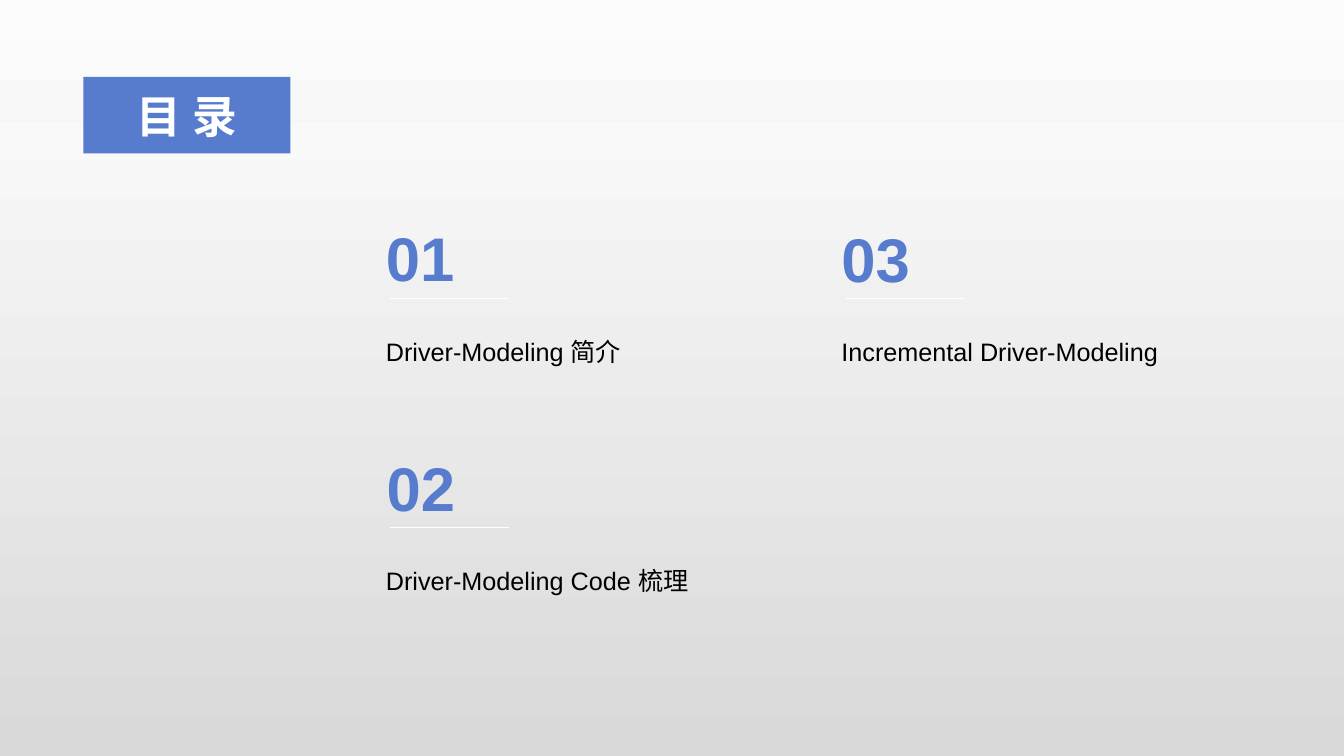
"""Build the contents slide with a title block and three numbered topics."""
from lxml import etree
from pptx import Presentation
from pptx import util as u
from pptx.dml.color import RGBColor
from pptx.enum import shapes, text
from pptx.oxml.ns import qn


class Theme:
    font = "Arial"
    blue = RGBColor.from_string("577CCE")
    white = RGBColor.from_string("FFFFFF")
    gray = RGBColor.from_string("D9D9D9")
    black = RGBColor.from_string("000000")
    head, num, body = u.Pt(32), u.Pt(44), u.Pt(18)


def style(para, size, color, bold=False):
    for run in para.runs:
        font = run.font
        font.name, font.size, font.bold = Theme.font, size, bold
        font.color.rgb = color


def label(slide, words, left, top, width, height):
    box = slide.shapes.add_textbox(u.Pt(left), u.Pt(top), u.Pt(width), u.Pt(height))
    box.text_frame.word_wrap = True
    box.text_frame.text = words
    return box.text_frame.paragraphs[0]


deck = Presentation()
deck.slide_width, deck.slide_height = u.Pt(960), u.Pt(540)
slide = deck.slides.add_slide(deck.slide_layouts[5])

fill = slide.background.fill
fill.gradient()
fill.gradient_angle = 270
for stop, color in zip(fill.gradient_stops, (Theme.white, Theme.gray)):
    stop.color.rgb = color

band = slide.shapes.add_shape(shapes.MSO_SHAPE.RECTANGLE, 0, 0, deck.slide_width, u.Pt(87))
band.shadow.inherit = False
band.fill.solid()
band.fill.fore_color.rgb = Theme.gray
band.line.fill.background()
tint = band._element.spPr.find(qn("a:solidFill"))[0]
etree.SubElement(tint, qn("a:alpha")).set("val", "8000")

topics = [
    ("01", "Driver-Modeling 简介", 0, 0, 153.4),
    ("02", "Driver-Modeling Code 梳理", 0, 1, 318.2),
    ("03", "Incremental Driver-Modeling", 1, 0, 154.6),
]
for num, words, col, row, top in topics:
    left, base = 268.6 + 325.4 * col, 226 + 163.7 * row
    para = label(slide, words, left, base, 255, 76)
    para.alignment = text.PP_ALIGN.JUSTIFY
    para.line_spacing = 1.5
    para.space_after = u.Pt(20)
    style(para, Theme.body, Theme.black)

    para = label(slide, num, left + 0.5 * row, top, 64, 60.5)
    style(para, Theme.num, Theme.blue, True)

    rule = slide.shapes.add_connector(
        shapes.MSO_CONNECTOR.STRAIGHT,
        u.Pt(left + 95), u.Pt(base - 13), u.Pt(left + 10), u.Pt(base - 13))
    rule.line.color.rgb = Theme.white
    rule.line.width = u.Pt(0.5)
    etree.SubElement(rule._element.spPr, qn("a:effectLst"))

title = slide.shapes.title
title.left, title.top, title.width, title.height = map(u.Pt, (59.5, 55, 148, 54.5))
title.fill.solid()
title.fill.fore_color.rgb = Theme.blue
frame = title.text_frame
frame.text = "目录"
frame.auto_size = text.MSO_AUTO_SIZE.NONE
frame.vertical_anchor = text.MSO_ANCHOR.MIDDLE
para = frame.paragraphs[0]
para.alignment = text.PP_ALIGN.CENTER
style(para, Theme.head, Theme.white, True)
para.runs[0].font._element.set("spc", "800")
slide.shapes._spTree.append(title._element)

deck.save("out.pptx")
